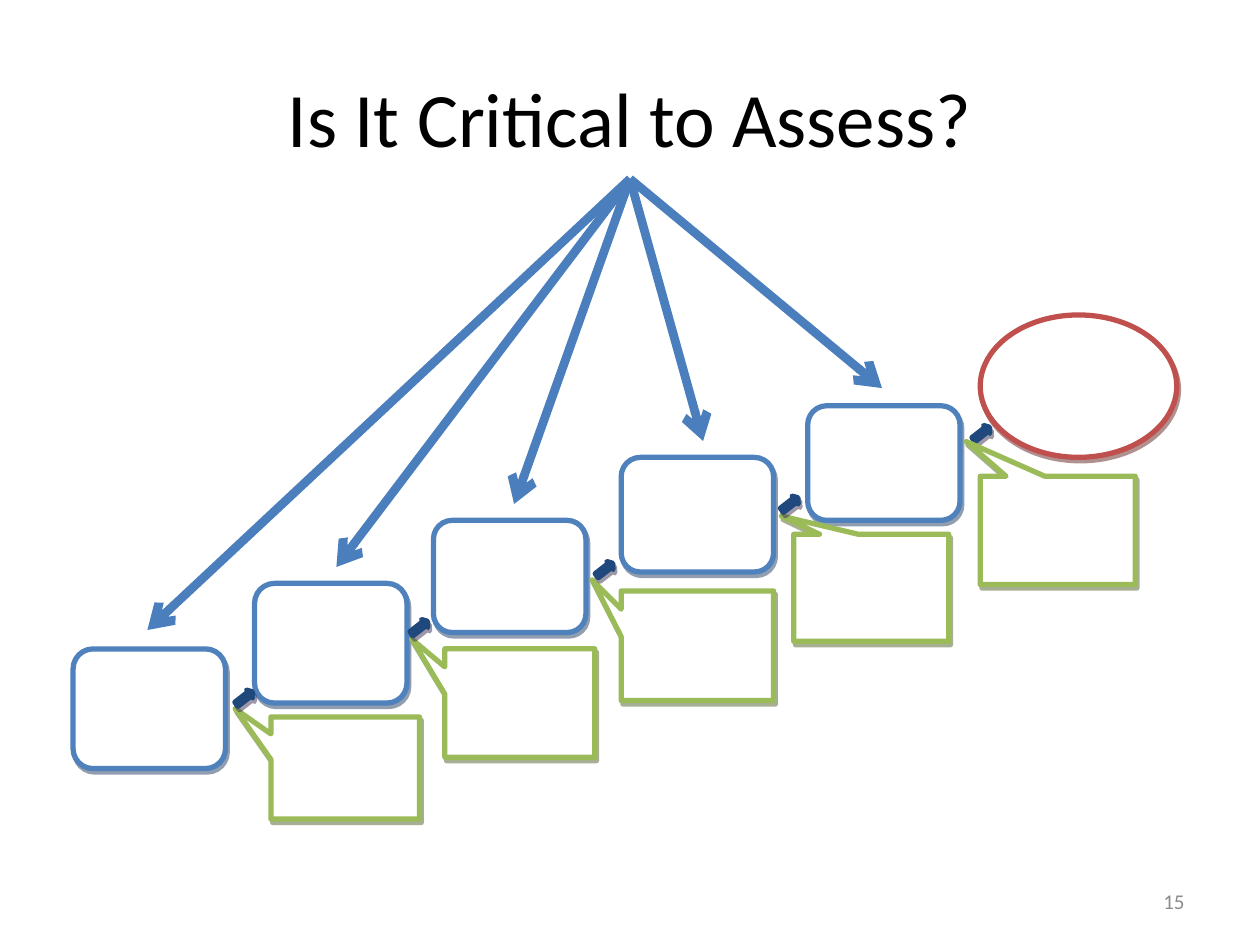
from lxml.etree import SubElement
from pptx import Presentation
from pptx.dml.color import RGBColor
from pptx.enum.shapes import MSO_CONNECTOR as Connector, MSO_SHAPE as Preset
from pptx.enum.text import MSO_ANCHOR as Anchor, PP_ALIGN as Align
from pptx.oxml.ns import qn
from pptx.util import Inches, Pt

STEP = dict(preset=Preset.ROUNDED_RECTANGLE, fill="FFFFFF", line="4F81BD", shadow="243F60")
GOAL = dict(preset=Preset.OVAL, fill="FFFFFF", line="C0504D", shadow="622423")
CALLOUT = dict(preset=Preset.RECTANGULAR_CALLOUT, fill="FFFFFF", line="9BBB59", shadow="4E6128")
ARROW = dict(preset=Preset.RIGHT_ARROW, fill="1F497D", line="1F497D", shadow="3F3151")

STEP_WIDTH = 1.21
STEPS = [(0, 2.65, 0.95), (1.44, 2.13, 0.95), (2.86, 1.63, 0.89),
         (4.35, 1.13, 0.91), (5.83, 0.72, 0.91)]
CALLOUTS = [((1.57, 3.19, 1.18, 0.81), (-0.74, -0.58)),
            ((2.95, 2.65, 1.19, 0.86), (-0.72, -0.59)),
            ((4.35, 2.19, 1.21, 0.87), (-0.69, -0.6)),
            ((5.72, 1.74, 1.23, 0.85), (-0.58, -0.67)),
            ((7.2, 1.28, 1.23, 0.86), (-0.59, -0.82))]
ARROWS = [(1.28, 3), (2.67, 2.44), (4.14, 1.98), (5.61, 1.46), (7.13, 0.9)]
FAN_TIPS = [(0, 3.58), (1.5, 3.08), (2.91, 2.58), (4.41, 2.08), (5.83, 1.66)]


def rgb(value):
    """Turn a hex string into a colour."""
    return RGBColor.from_string(value)


def set_format(target, values):
    """Set each attribute in values on the target."""
    for name, value in values.items():
        setattr(target, name, value)


def add_shadow(shape, color):
    """Give the shape a hard, half-transparent shadow."""
    shape.shadow.inherit = False
    effects = shape._element.spPr.find(qn("a:effectLst"))
    outer = SubElement(effects, qn("a:outerShdw"), dist="28400", dir="3780000",
                       algn="ctr", rotWithShape="0")
    tint = SubElement(outer, qn("a:srgbClr"), val=color)
    SubElement(tint, qn("a:alpha"), val="50000")


def add_part(shapes, box, look, adjustments=(), rotation=0):
    """Add one outlined staircase part with its look."""
    part = shapes.add_shape(look["preset"], *map(Inches, box))
    part.fill.solid()
    part.fill.fore_color.rgb = rgb(look["fill"])
    part.line.color.rgb = rgb(look["line"])
    set_format(part, {"rotation": rotation})
    set_format(part.line, {"width": Pt(3)})
    for index, value in enumerate(adjustments):
        part.adjustments[index] = value
    add_shadow(part, look["shadow"])


def add_staircase(slide, left, top):
    """Build the rising steps, their callouts, the arrows and the goal."""
    shapes = slide.shapes.add_group_shape().shapes
    for x, y, height in STEPS:
        add_part(shapes, (left + x, top + y, STEP_WIDTH, height), STEP)
    add_part(shapes, (left + 7.2, top, 1.56, 1.13), GOAL)

    def add_callout(box, pointer):
        """Add a callout placed from the staircase corner."""
        x, y, width, height = box
        add_part(shapes, (left + x, top + y, width, height), CALLOUT, pointer)

    for box, pointer in CALLOUTS[:-1]:
        add_callout(box, pointer)
    for x, y in ARROWS:
        add_part(shapes, (left + x, top + y, 0.16, 0.08), ARROW, (0.5, 0.35), 322.1)
    add_callout(*CALLOUTS[-1])


def add_fan(slide, left, top):
    """Draw the arrows that spread from the title to the steps."""
    for x, y in FAN_TIPS:
        ray = slide.shapes.add_connector(
            Connector.STRAIGHT, Inches(left + 3.83), Inches(top),
            Inches(left + x), Inches(top + y))
        ray.line.color.rgb = rgb("4B7EBC")
        ray.line.width = Pt(5)
        SubElement(ray.line._get_or_add_ln(), qn("a:tailEnd"), type="arrow")
        SubElement(ray._element.spPr, qn("a:effectLst"))


def write_line(holder, text, align, size, color):
    """Write one formatted line, centred in height."""
    frame = holder.text_frame
    set_format(frame, {"text": text, "word_wrap": True, "vertical_anchor": Anchor.MIDDLE})
    line = frame.paragraphs[0]
    line.alignment = align
    font = line.runs[0].font
    set_format(font, {"name": "Calibri", "size": Pt(size)})
    font.color.rgb = rgb(color)


def add_title(slide, left, top, width, height):
    """Place the heading in the title placeholder."""
    title = slide.shapes.title
    set_format(title, {"left": Inches(left), "top": Inches(top),
                       "width": Inches(width), "height": Inches(height)})
    write_line(title, "Is It Critical to Assess?", Align.CENTER, 44, "000000")


def add_page_number(slide, left, top, width, height):
    """Place the page number at the foot."""
    number = slide.shapes.add_textbox(*map(Inches, (left, top, width, height)))
    write_line(number, "15", Align.RIGHT, 12, "8C8C8C")


def main():
    """Build and save the slide."""
    deck = Presentation()
    set_format(deck, {"slide_width": Inches(10), "slide_height": Inches(7.5)})
    slide = deck.slides.add_slide(deck.slide_layouts[5])
    add_title(slide, 0.5, 0.3, 9, 1.25)
    add_staircase(slide, 0.58, 2.5)
    add_fan(slide, 1.17, 1.42)
    add_page_number(slide, 7.17, 6.95, 2.33, 0.4)
    deck.save("out.pptx")


if __name__ == "__main__":
    main()
